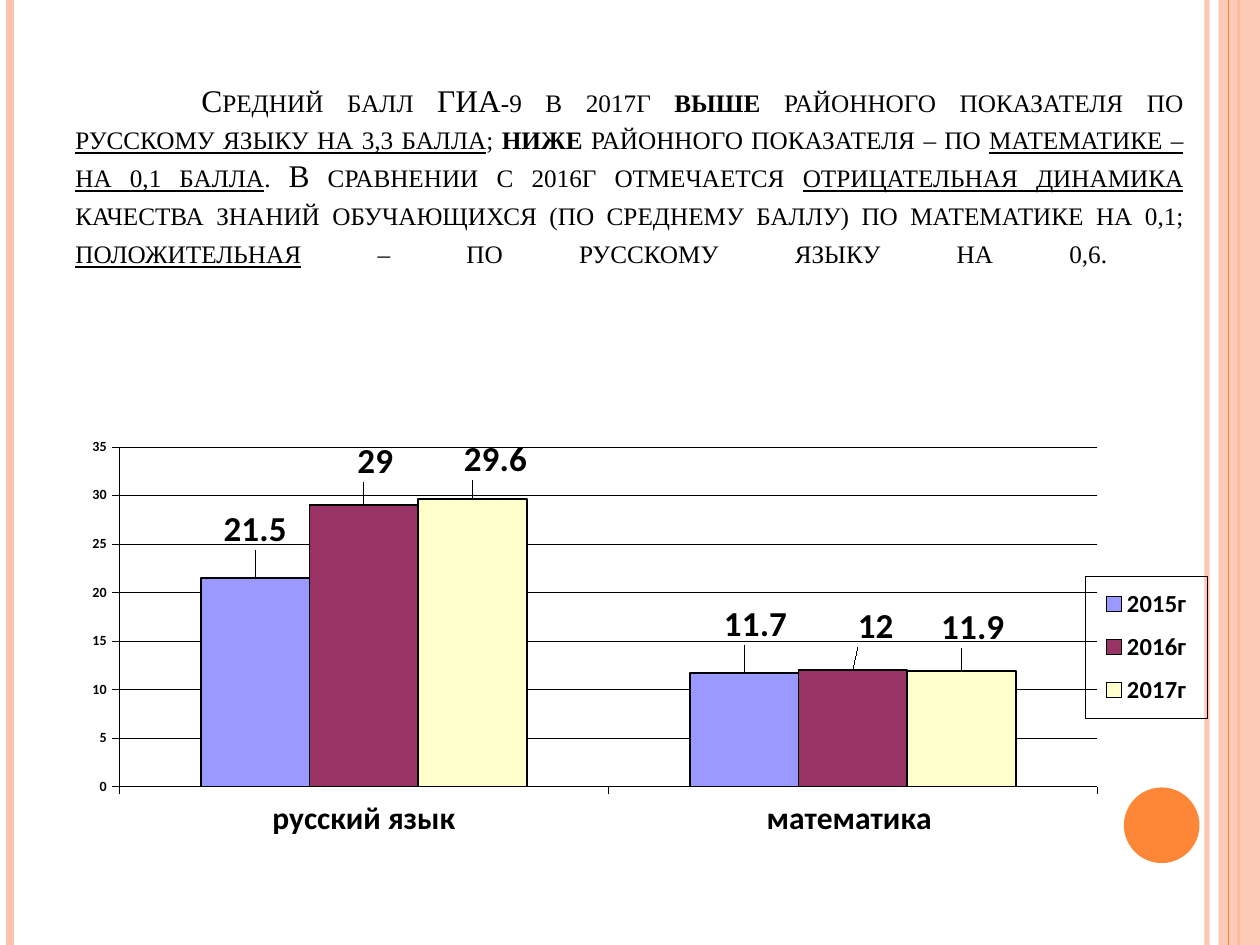
from dataclasses import dataclass

from lxml.etree import SubElement
from pptx import Presentation
from pptx.chart.data import CategoryChartData
from pptx.dml.color import RGBColor
from pptx.enum.chart import XL_CHART_TYPE, XL_LEGEND_POSITION, XL_TICK_LABEL_POSITION, XL_TICK_MARK
from pptx.enum.shapes import MSO_CONNECTOR, MSO_SHAPE
from pptx.enum.text import MSO_ANCHOR, PP_ALIGN
from pptx.oxml import parse_xml
from pptx.oxml.ns import nsdecls, qn
from pptx.util import Inches, Pt


@dataclass(frozen=True)
class Theme:
    orange: str = "FE8637"
    peach: str = "FEC3AE"
    black: str = "000000"
    years: tuple = ("9999FF", "993366", "FFFFCC")
    title_font: str = "Times New Roman"
    chart_font: str = "Calibri"
    title_size: float = 18
    category_size: float = 18
    label_size: float = 20
    legend_size: float = 14
    axis_size: float = 8
    hairline: float = 0.25


TITLE = [
    ("\tСредний балл ГИА-9 в 2017г ", {}),
    ("выше ", {"bold": True}),
    ("районного показателя по ", {}),
    ("русскому языку на 3,3 балла", {"underline": True}),
    ("; ", {}),
    ("ниже", {"bold": True}),
    (" районного показателя – по ", {}),
    ("математике – на 0,1 балла", {"underline": True}),
    (". В сравнении с 2016г отмечается ", {}),
    ("отрицательная динамика ", {"underline": True}),
    ("качества знаний обучающихся (по среднему баллу) по математике на 0,1; ", {}),
    ("положительная", {"underline": True}),
    (" – по русскому языку на 0,6. ", {}),
]
SUBJECTS = ["русский язык", "математика "]
SCORES = {"2015г": (21.5, 11.7), "2016г": (29, 12), "2017г": (29.6, 11.9)}
# Label shifts from the bar end, as shares of the chart, one per score
LABEL_SHIFTS = [(0, -0.05), (0.01, -0.05), (0.01, -0.04), (0.02, -0.04), (0.02, -0.03), (0.01, -0.04)]


def style_font(font, name, size, color, bold=False, underline=False):
    font.name, font.size = name, Pt(size)
    font.bold, font.underline = bold, underline
    font.color.rgb = RGBColor.from_string(color)


def add_run(p, text, small_caps=False, **style):
    r = p.add_run()
    r.text = text
    style_font(r.font, **style)
    if small_caps:
        r.font._element.set("cap", "small")
    return r


def style_line(line, color, width):
    line.color.rgb = RGBColor.from_string(color)
    line.width = Pt(width)


def set_alpha(shape, percent):
    for color in shape._element.xpath("./p:spPr//a:srgbClr"):
        SubElement(color, qn("a:alpha"), val=str(percent * 1000))


def set_layout(parent, index, **values):
    """Place a chart part by hand; values are shares of the chart."""
    for old in parent.findall(qn("c:layout")):
        parent.remove(old)
    items = "".join(f'<c:{key} val="{value}"/>' for key, value in values.items())
    parent.insert(index, parse_xml(
        f'<c:layout {nsdecls("c")}><c:manualLayout>{items}</c:manualLayout></c:layout>'))


def hide_leader_lines(labels):
    labels.append(parse_xml(
        f'<c:extLst {nsdecls("c")}><c:ext uri="{{CE6537A1-D6FC-4f65-9D91-7224C49458BB}}" '
        'xmlns:c15="http://schemas.microsoft.com/office/drawing/2012/chart">'
        '<c15:showLeaderLines val="0"/></c:ext></c:extLst>'))


class SlideBuilder:
    def __init__(self, s, theme):
        self.s, self.theme = s, theme

    def vertical_line(self, x, color, width, alpha=None):
        line = self.s.shapes.add_connector(
            MSO_CONNECTOR.STRAIGHT, Inches(x), Inches(0), Inches(x), Inches(7.5))
        style_line(line.line, color, width)
        SubElement(line._element.spPr, qn("a:effectLst"))
        if alpha:
            set_alpha(line, alpha)

    def shape(self, kind, x, y, w, h, color, alpha=None):
        sp = self.s.shapes.add_shape(kind, Inches(x), Inches(y), Inches(w), Inches(h))
        sp.shadow.inherit = False
        sp.fill.solid()
        sp.fill.fore_color.rgb = RGBColor.from_string(color)
        sp.line.fill.background()
        if alpha:
            set_alpha(sp, alpha)

    def title(self, x, y, w, h, parts):
        t = self.theme
        tf = self.s.shapes.add_textbox(Inches(x), Inches(y), Inches(w), Inches(h)).text_frame
        tf.word_wrap = True
        tf.vertical_anchor = MSO_ANCHOR.BOTTOM
        tf.margin_bottom = Inches(0.36)
        p = tf.paragraphs[0]
        p.alignment = PP_ALIGN.JUSTIFY
        tabs = SubElement(p._p.get_or_add_pPr(), qn("a:tabLst"))
        SubElement(tabs, qn("a:tab"), pos=str(Inches(1)), algn="l")
        for text, style in parts:
            add_run(p, text, small_caps=True, name=t.title_font, size=t.title_size,
                    color=t.black, **style)
        p.add_line_break()  # stretches the last line to full width

    def axis(self, axis, size):
        t = self.theme
        style_line(axis.format.line, t.black, t.hairline)
        axis.major_tick_mark = XL_TICK_MARK.OUTSIDE
        axis.minor_tick_mark = XL_TICK_MARK.NONE
        style_font(axis.tick_labels.font, t.chart_font, size, t.black, bold=True)

    def legend(self, chart):
        t = self.theme
        chart.has_legend = True
        legend = chart.legend
        legend.position = XL_LEGEND_POSITION.RIGHT
        legend.include_in_layout = False
        style_font(legend.font, t.chart_font, t.legend_size, t.black, bold=True)
        element = chart.element.xpath(".//c:legend")[0]
        set_layout(element, 1, xMode="edge", yMode="edge", x=0.888, y=0.34, w=0.106, h=0.32)
        element.find(qn("c:overlay")).addnext(parse_xml(
            f'<c:spPr {nsdecls("c", "a")}><a:noFill/><a:ln w="{Pt(t.hairline)}"><a:solidFill>'
            f'<a:srgbClr val="{t.black}"/></a:solidFill></a:ln></c:spPr>'))

    def column_chart(self, x, y, w, h, categories, scores, shifts):
        t = self.theme
        data = CategoryChartData()
        data.categories = categories
        for year, values in scores.items():
            data.add_series(year, values)
        chart = self.s.shapes.add_chart(
            XL_CHART_TYPE.COLUMN_CLUSTERED, Inches(x), Inches(y), Inches(w), Inches(h), data).chart
        chart.has_title = False
        style_font(chart.font, t.chart_font, t.axis_size, t.black, bold=True)
        set_layout(chart.element.xpath(".//c:plotArea")[0], 0, layoutTarget="inner",
                   xMode="edge", yMode="edge", x=0.048, y=0.05, w=0.85, h=0.764)

        # Axes
        self.axis(chart.category_axis, t.category_size)
        chart.category_axis.tick_label_position = XL_TICK_LABEL_POSITION.LOW
        values = chart.value_axis
        self.axis(values, t.axis_size)
        values.minimum_scale, values.maximum_scale, values.major_unit = 0, 35, 5
        style_line(values.major_gridlines.format.line, t.black, t.hairline)

        # Bars and their labels
        plot = chart.plots[0]
        plot.gap_width, plot.overlap = 150, 0
        plot.vary_by_categories = False
        for series, color in zip(plot.series, t.years):
            series.format.fill.solid()
            series.format.fill.fore_color.rgb = RGBColor.from_string(color)
            style_line(series.format.line, t.black, 1)
            series.data_labels.show_value = True
            style_font(series.data_labels.font, t.chart_font, t.label_size, t.black, bold=True)
            for i in range(len(categories)):
                style_font(series.points[i].data_label.font, t.chart_font, t.label_size,
                           t.black, bold=True)
        for label, (dx, dy) in zip(chart.element.xpath(".//c:dLbl"), shifts):
            set_layout(label, 1, x=dx, y=dy)
        for labels in chart.element.xpath(".//c:ser/c:dLbls"):
            hide_leader_lines(labels)
        self.legend(chart)


def main():
    prs = Presentation()
    prs.slide_width, prs.slide_height = Inches(10), Inches(7.5)
    theme = Theme()
    page = SlideBuilder(prs.slides.add_slide(prs.slide_layouts[6]), theme)
    # Side stripes and circle
    page.vertical_line(9.58, theme.peach, 3, alpha=93)
    page.vertical_line(0.08, theme.peach, 4.5)
    page.vertical_line(9.83, theme.orange, 1.5)
    page.shape(MSO_SHAPE.RECTANGLE, 9.67, 0, 0.33, 7.5, theme.peach, alpha=87)
    page.vertical_line(9.75, theme.orange, 0.75)
    page.shape(MSO_SHAPE.OVAL, 8.92, 6.25, 0.6, 0.6, theme.orange)
    # Title and chart
    page.title(0.5, 0.3, 8.99, 2.5, TITLE)
    page.column_chart(0.51, 3.37, 9.13, 3.53, SUBJECTS, SCORES, LABEL_SHIFTS)
    prs.save("out.pptx")


if __name__ == "__main__":
    main()
